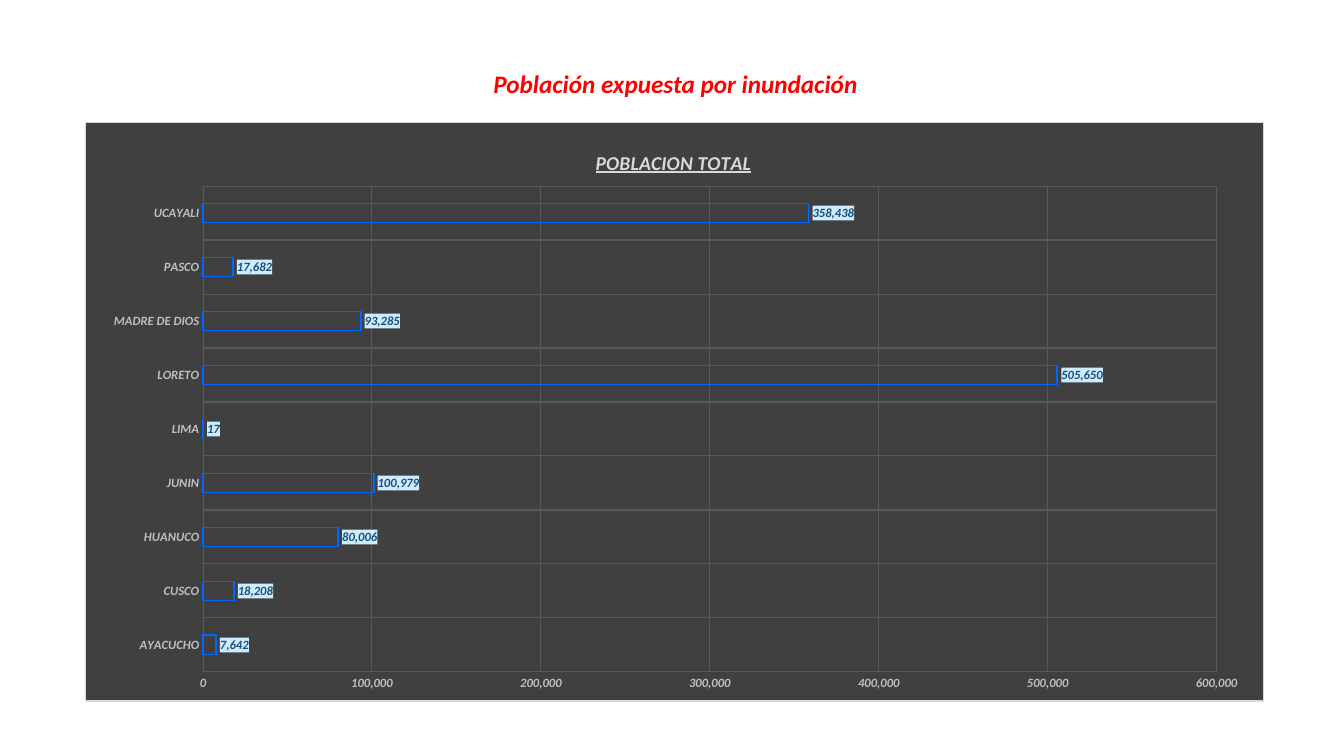
"""Builds the slide on the population exposed to flooding, by region."""
import dataclasses

import lxml.etree
import pptx
import pptx.chart.axis
import pptx.chart.chart
import pptx.chart.data
import pptx.dml.color
import pptx.dml.line
import pptx.enum.chart
import pptx.enum.text
import pptx.oxml
import pptx.oxml.ns
import pptx.text.text
import pptx.util

COLORS = {
    "heading": "FF0000", "panel": "404040", "border": "D9D9D9", "grid": "595959",
    "axis": "BFBFBF", "bar": "0066FF", "label": "1F4E79", "label_fill": "CCECFF",
}


@dataclasses.dataclass(frozen=True)
class Region:
    name: str
    population: int


REGIONS = [
    Region("AYACUCHO", 7642),
    Region("CUSCO", 18208),
    Region("HUANUCO", 80006),
    Region("JUNIN", 100979),
    Region("LIMA", 17),
    Region("LORETO", 505650),
    Region("MADRE DE DIOS", 93285),
    Region("PASCO", 17682),
    Region("UCAYALI", 358438),
]


def rgb(color: str) -> pptx.dml.color.RGBColor:
    return pptx.dml.color.RGBColor.from_string(COLORS[color])


def style_font(font: pptx.text.text.Font, size: float, color: str) -> None:
    font.name = "Calibri"
    font.size = pptx.util.Pt(size)
    font.bold = font.italic = True
    font.color.rgb = rgb(color)


def style_line(line: pptx.dml.line.LineFormat, width: float, color: str) -> None:
    line.width = pptx.util.Pt(width)
    line.color.rgb = rgb(color)


def fill_properties(fill: str, border: str = "") -> lxml.etree._Element:
    outline = (f'<a:ln w="9525"><a:solidFill><a:srgbClr val="{COLORS[border]}"/>'
               '</a:solidFill></a:ln>') if border else ""
    return pptx.oxml.parse_xml(
        f'<c:spPr {pptx.oxml.ns.nsdecls("c", "a")}><a:solidFill>'
        f'<a:srgbClr val="{COLORS[fill]}"/></a:solidFill>{outline}</c:spPr>')


def place(part: lxml.etree._Element, index: int, **fractions: float) -> None:
    for layout in part.findall(pptx.oxml.ns.qn("c:layout")):
        part.remove(layout)
    target = '<c:layoutTarget val="inner"/>' if "w" in fractions else ""
    modes = "".join(f'<c:{key}Mode val="edge"/>' for key in ("x", "y"))
    values = "".join(f'<c:{key} val="{value}"/>' for key, value in fractions.items())
    part.insert(index, pptx.oxml.parse_xml(
        f'<c:layout {pptx.oxml.ns.nsdecls("c")}><c:manualLayout>{target}{modes}{values}'
        '</c:manualLayout></c:layout>'))


def style_axis(axis: pptx.chart.axis._BaseAxis) -> None:
    axis.has_major_gridlines = True
    style_line(axis.major_gridlines.format.line, 0.75, "grid")
    axis.format.line.fill.background()
    axis.major_tick_mark = pptx.enum.chart.XL_TICK_MARK.NONE
    axis.minor_tick_mark = pptx.enum.chart.XL_TICK_MARK.NONE
    style_font(axis.tick_labels.font, 9, "axis")


def style_chart(chart: pptx.chart.chart.Chart) -> None:
    chart.has_legend = False
    chart.font.name = "Calibri"
    chart.font.size = pptx.util.Pt(10)
    chart.has_title = True
    chart_title = chart.chart_title.text_frame
    chart_title.text = "POBLACION TOTAL"
    title_font = chart_title.paragraphs[0].runs[0].font
    style_font(title_font, 14, "border")
    title_font.underline = True

    for axis in (chart.category_axis, chart.value_axis):
        style_axis(axis)
    chart.value_axis.minimum_scale = 0
    chart.value_axis.maximum_scale = 600000
    chart.value_axis.major_unit = 100000
    chart.value_axis.tick_labels.number_format = "#,##0"
    chart.value_axis.tick_labels.number_format_is_linked = False

    bars = chart.plots[0]
    bars.vary_by_categories = False
    bars.gap_width = 182
    bars.overlap = -50
    population = bars.series[0]
    population.format.fill.background()
    style_line(population.format.line, 1.25, "bar")
    labels = population.data_labels
    labels.show_value = True
    labels.position = pptx.enum.chart.XL_LABEL_POSITION.OUTSIDE_END
    labels.number_format = "#,##0"
    labels.number_format_is_linked = False
    style_font(labels.font, 9, "label")

    space = chart.element
    space.xpath("c:chart")[0].addnext(fill_properties("panel", "border"))
    space.xpath(".//c:ser/c:dLbls/c:txPr")[0].addprevious(fill_properties("label_fill"))
    place(space.xpath(".//c:plotArea")[0], 0, x=0.1, y=0.11, w=0.86, h=0.84)
    place(space.xpath("c:chart/c:title")[0], 1, x=0.43, y=0.04)


def main() -> None:
    inches = pptx.util.Inches
    presentation = pptx.Presentation()
    presentation.slide_width = inches(13.33)
    presentation.slide_height = inches(7.5)
    slide = presentation.slides.add_slide(presentation.slide_layouts[5])

    heading = slide.shapes.title
    heading.left, heading.top = inches(4.77), inches(0.63)
    heading.width, heading.height = inches(3.86), inches(0.4)
    heading.text_frame.text = "Población expuesta por inundación"
    heading.text_frame.word_wrap = False
    heading.text_frame.auto_size = pptx.enum.text.MSO_AUTO_SIZE.SHAPE_TO_FIT_TEXT
    paragraph = heading.text_frame.paragraphs[0]
    paragraph.alignment = pptx.enum.text.PP_ALIGN.CENTER
    style_font(paragraph.runs[0].font, 18, "heading")

    exposure = pptx.chart.data.CategoryChartData(number_format="#,##0")
    exposure.categories = [region.name for region in REGIONS]
    exposure.add_series("Series 1", [region.population for region in REGIONS])
    frame = slide.shapes.add_chart(
        pptx.enum.chart.XL_CHART_TYPE.BAR_CLUSTERED,
        inches(0.84), inches(1.21), inches(11.7), inches(5.75), exposure)
    style_chart(frame.chart)
    presentation.save("out.pptx")


if __name__ == "__main__":
    main()
